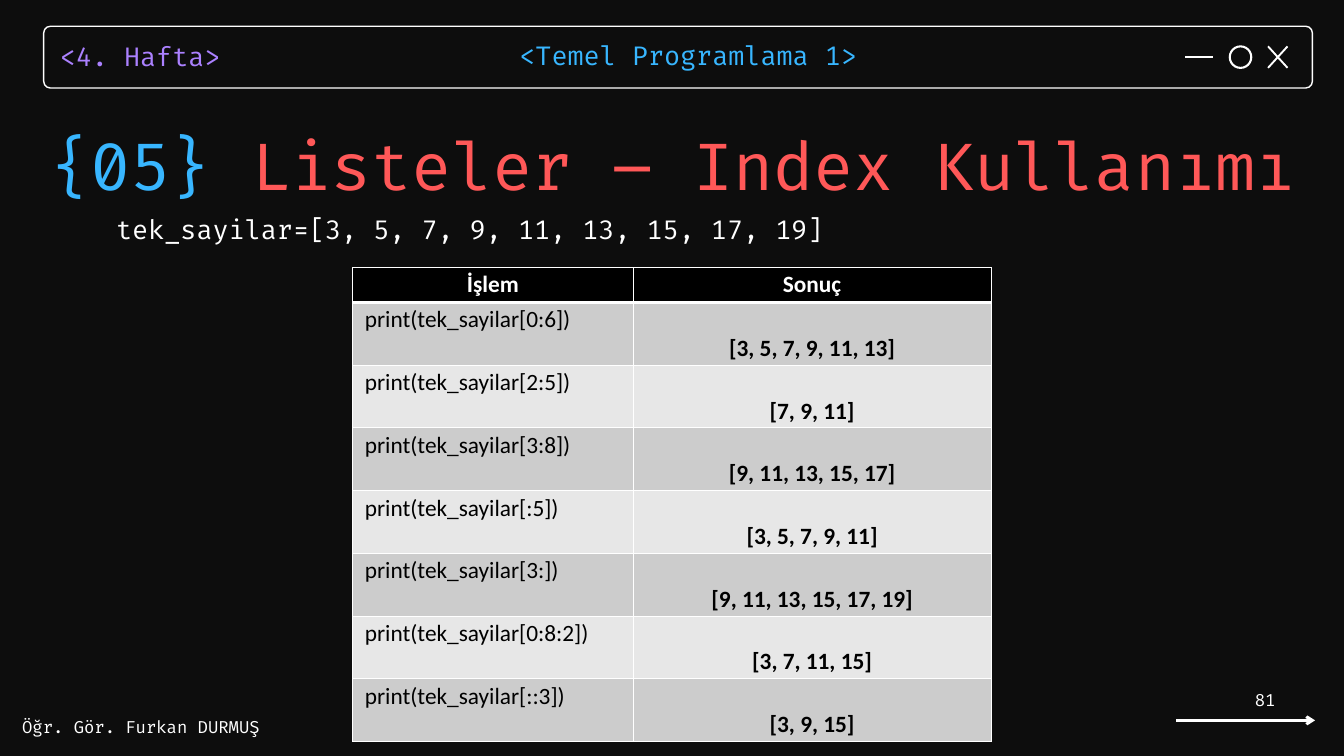
from dataclasses import dataclass

import pptx
import pptx.dml.color
import pptx.enum.shapes
import pptx.enum.text
import pptx.oxml
import pptx.oxml.ns
import pptx.slide
import pptx.util
from pptx.util import Inches

ALIGN = pptx.enum.text.PP_ALIGN
SHAPE = pptx.enum.shapes.MSO_SHAPE


@dataclass(frozen=True)
class Theme:
    background: str = "0D0D0D"
    white: str = "FFFFFF"
    black: str = "000000"
    blue: str = "38B6FF"
    purple: str = "AB81FF"
    red: str = "FF5858"
    bands: tuple[str, str] = ("CCCCCC", "E7E7E7")
    code_font: str = "Fira Code"
    table_font: str = "Calibri"
    title: float = 70
    text: float = 28
    table: float = 25
    small: float = 18


@dataclass(frozen=True)
class Label:
    text: str
    box: tuple[float, float, float, float]
    size: float
    color: str
    align: ALIGN = ALIGN.LEFT
    leading: float | None = None


@dataclass(frozen=True)
class Stroke:
    start: tuple[float, float]
    end: tuple[float, float]
    width: float = 2
    arrow: bool = False


@dataclass(frozen=True)
class Example:
    index: str
    result: str


THEME = Theme()

LABELS = [
    Label("<Temel Programlama 1>", (7.73, 0.51, 5.29, 0.53), THEME.text, THEME.blue, leading=39.2),
    Label("<4. Hafta>", (0.89, 0.52, 3.4, 0.53), THEME.text, THEME.purple, leading=39.2),
    Label("Öğr. Gör. Furkan DURMUŞ", (0.33, 10.67, 3.67, 0.3), THEME.small, THEME.white),
    Label("81", (16.75, 10.26, 2.23, 0.3), THEME.small, THEME.white, ALIGN.RIGHT),
    Label("tek_sayilar=[3, 5, 7, 9, 11, 13, 15, 17, 19]", (1.73, 3.17, 17.14, 0.47),
          THEME.text, THEME.white, ALIGN.JUSTIFY),
]

STROKES = [
    Stroke((18.87, 0.69), (19.16, 1.01)),
    Stroke((19.16, 0.69), (18.87, 1.01)),
    Stroke((17.64, 0.85), (18.05, 0.85)),
    Stroke((17.5, 10.72), (19.57, 10.72), 3, arrow=True),
]

HEADINGS = ("İşlem", "Sonuç")
EXAMPLES = [
    Example("0:6", "[3, 5, 7, 9, 11, 13]"),
    Example("2:5", "[7, 9, 11]"),
    Example("3:8", "[9, 11, 13, 15, 17]"),
    Example(":5", "[3, 5, 7, 9, 11]"),
    Example("3:", "[9, 11, 13, 15, 17, 19]"),
    Example("0:8:2", "[3, 7, 11, 15]"),
    Example("::3", "[3, 9, 15]"),
]


def rgb(color: str) -> pptx.dml.color.RGBColor:
    return pptx.dml.color.RGBColor.from_string(color)


def style_font(font, name: str, size: float, color: str, bold: bool = False) -> None:
    font.name = name
    font.size = pptx.util.Pt(size)
    font.bold = bold
    font.color.rgb = rgb(color)


def clear_margins(tf) -> None:
    tf.margin_left = tf.margin_top = tf.margin_right = tf.margin_bottom = 0


def add_label(s: pptx.slide.Slide, label: Label) -> None:
    tf = s.shapes.add_textbox(*map(Inches, label.box)).text_frame
    tf.word_wrap = True
    clear_margins(tf)
    tf.text = label.text
    p = tf.paragraphs[0]
    p.alignment = label.align
    if label.leading:
        p.line_spacing = pptx.util.Pt(label.leading)
    style_font(p.runs[0].font, THEME.code_font, label.size, label.color)


def add_stroke(s: pptx.slide.Slide, stroke: Stroke) -> None:
    line = s.shapes.add_connector(pptx.enum.shapes.MSO_CONNECTOR.STRAIGHT,
                                  *map(Inches, stroke.start + stroke.end))
    line.line.color.rgb = rgb(THEME.white)
    line.line.width = pptx.util.Pt(stroke.width)
    sp_pr = line.element.spPr
    if stroke.arrow:
        ln = sp_pr.find(pptx.oxml.ns.qn("a:ln"))
        ln.append(pptx.oxml.parse_xml(
            f'<a:tailEnd {pptx.oxml.ns.nsdecls("a")} type="arrow"/>'))
    sp_pr.append(pptx.oxml.parse_xml(f'<a:effectLst {pptx.oxml.ns.nsdecls("a")}/>'))


def add_outline(s: pptx.slide.Slide, kind: SHAPE, box: tuple[float, float, float, float],
                width: float):
    sp = s.shapes.add_shape(kind, *map(Inches, box))
    sp.shadow.inherit = False
    sp.fill.background()
    sp.line.color.rgb = rgb(THEME.white)
    sp.line.width = pptx.util.Pt(width)
    return sp


def fill_title(s: pptx.slide.Slide) -> None:
    sp = s.shapes.title
    sp.left, sp.top, sp.width, sp.height = map(Inches, (0.75, 1.61, 19.25, 1.37))
    tf = sp.text_frame
    tf.word_wrap = True
    tf.auto_size = pptx.enum.text.MSO_AUTO_SIZE.NONE
    tf.vertical_anchor = pptx.enum.text.MSO_ANCHOR.TOP
    clear_margins(tf)
    p = tf.paragraphs[0]
    p.alignment = ALIGN.LEFT
    p.line_spacing = pptx.util.Pt(102.6)
    for text, color in (("{05}", THEME.blue), (" Listeler – Index Kullanımı", THEME.red)):
        r = p.add_run()
        r.text = text
        style_font(r.font, THEME.code_font, THEME.title, color)


def set_borders(cell, top: float, bottom: float) -> None:
    tc_pr = cell._tc.get_or_add_tcPr()
    for side, width in (("L", 1), ("R", 1), ("T", top), ("B", bottom)):
        tc_pr.append(pptx.oxml.parse_xml(
            f'<a:ln{side} {pptx.oxml.ns.nsdecls("a")} w="{pptx.util.Pt(width)}">'
            f'<a:solidFill><a:srgbClr val="{THEME.white}"/></a:solidFill></a:ln{side}>'))


def add_examples_table(s: pptx.slide.Slide) -> None:
    rows = [HEADINGS] + [(f"print(tek_sayilar[{e.index}])", e.result) for e in EXAMPLES]
    header_height, row_height = 0.52, 0.93
    height = header_height + row_height * len(EXAMPLES)
    table = s.shapes.add_table(len(rows), 2, *map(Inches, (5.25, 3.98, 9.5, height))).table
    for column, width in zip(table.columns, (4.17, 5.33)):
        column.width = Inches(width)
    for i, texts in enumerate(rows):
        header = i == 0
        table.rows[i].height = Inches(header_height if header else row_height)
        for j, text in enumerate(texts):
            cell = table.cell(i, j)
            set_borders(cell, 3 if i == 1 else 1, 3 if header else 1)
            cell.fill.solid()
            cell.fill.fore_color.rgb = rgb(THEME.black if header else THEME.bands[(i - 1) % 2])
            cell.text = text
            p = cell.text_frame.paragraphs[0]
            is_code = not header and j == 0
            if is_code:
                cell.margin_left = Inches(0.18)
            else:
                p.alignment = ALIGN.CENTER
                p.line_spacing = 1.0 if header else 2.0
            style_font(p.runs[0].font, THEME.table_font, THEME.table,
                       THEME.white if header else THEME.black, bold=not is_code)


def main() -> None:
    prs = pptx.Presentation()
    prs.slide_width, prs.slide_height = Inches(20), Inches(11.25)
    s = prs.slides.add_slide(prs.slide_layouts.get_by_name("Title Only"))
    s.background.fill.solid()
    s.background.fill.fore_color.rgb = rgb(THEME.background)

    window_bar = add_outline(s, SHAPE.ROUNDED_RECTANGLE, (0.65, 0.39, 18.88, 0.92), 1.5)
    window_bar.adjustments[0] = 0.11
    add_outline(s, SHAPE.OVAL, (18.3, 0.69, 0.32, 0.32), 2.25)
    for stroke in STROKES:
        add_stroke(s, stroke)
    for label in LABELS:
        add_label(s, label)
    add_examples_table(s)
    fill_title(s)
    prs.save("out.pptx")


if __name__ == "__main__":
    main()
